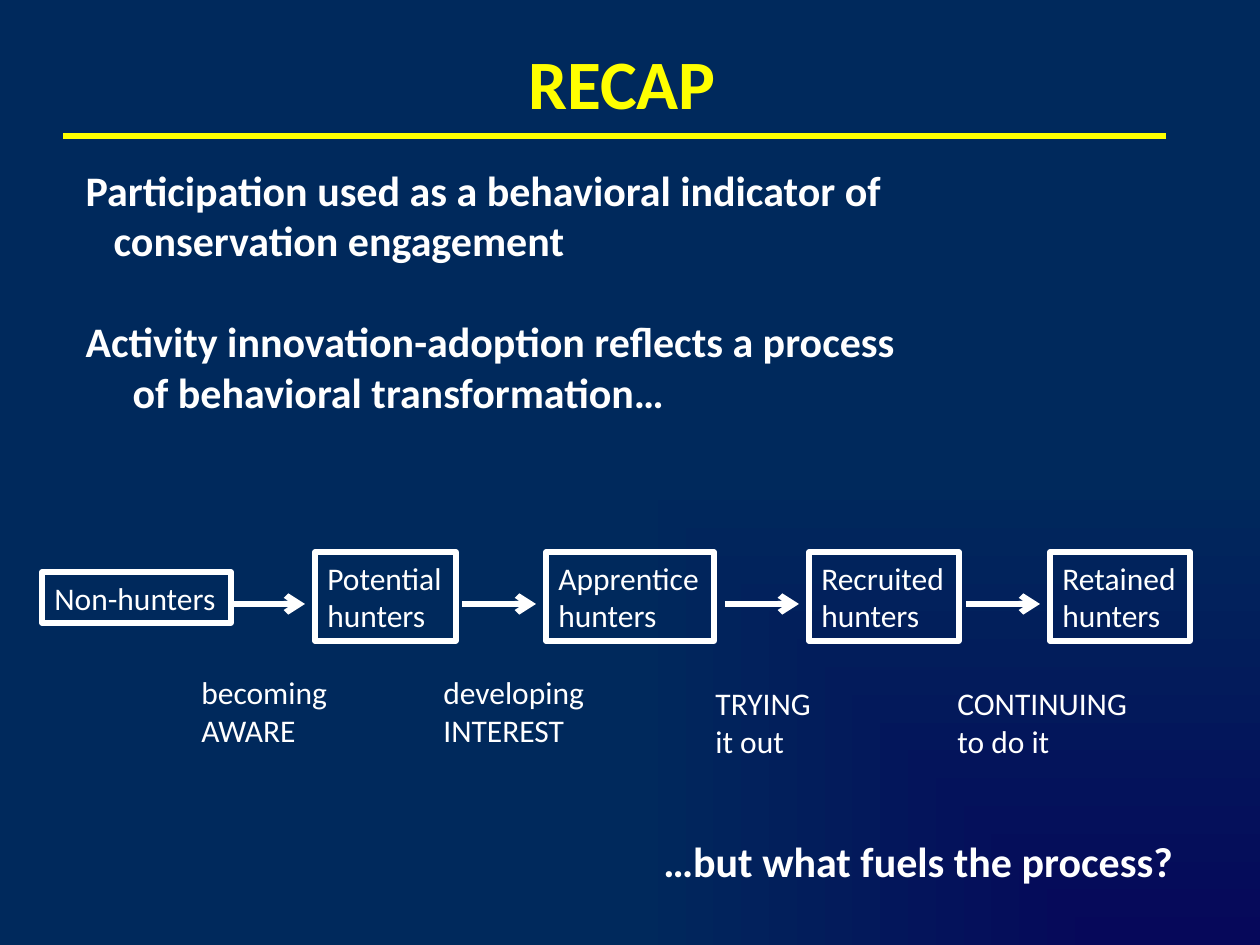
from pptx import Presentation
from pptx.dml.color import RGBColor as Rgb
from pptx.enum.shapes import MSO_CONNECTOR as Conn, MSO_SHAPE as Kind
from pptx.enum.text import MSO_ANCHOR as Anchor, MSO_AUTO_SIZE as Fit, PP_ALIGN as Align
from pptx.oxml.ns import qn
from pptx.util import Pt
from lxml.etree import SubElement as Sub

SCALE = 914400 / 126
WHITE, YELLOW = "FFFFFF", "FFFF00"
NAVY, INDIGO = "00295C", "06085A"


def emu(*sizes):
    return [round(size * SCALE) for size in sizes]


def color(code):
    return Rgb.from_string(code)


class Deck:
    font = "Calibri"

    def __init__(self, wide, high):
        self.prs = Presentation()
        self.prs.slide_width, self.prs.slide_height = emu(wide, high)
        self.slide = self.prs.slides.add_slide(self.prs.slide_layouts[1])
        self.shapes = self.slide.shapes

    def back(self, near, far):
        fill = self.slide.background.fill
        fill.gradient()
        for stop, code, place in zip(fill.gradient_stops, (near, far), (0, 1)):
            stop.color.rgb = color(code)
            stop.position = place
        grad = self.slide._element.find(".//" + qn("a:gradFill"))
        grad.remove(grad.find(qn("a:lin")))
        track = Sub(grad, qn("a:path"), path="rect")
        Sub(track, qn("a:fillToRect"), l="100000", t="100000")

    def style(self, shape, text, size, tint=WHITE, bold=False, align=Align.LEFT, wrap=False):
        frame = shape.text_frame
        frame.text = text
        frame.word_wrap = wrap
        frame.auto_size = Fit.NONE
        for para in frame.paragraphs:
            para.alignment = align
            for run in para.runs:
                font = run.font
                font.name, font.size, font.bold = self.font, Pt(size), bold
                font.color.rgb = color(tint)
        return frame

    def place(self, shape, area):
        shape.left, shape.top, shape.width, shape.height = emu(*area)

    def title(self, text, *area):
        shape = self.shapes.title
        self.place(shape, area)
        frame = self.style(shape, text, 39.6, YELLOW, True, Align.CENTER, True)
        frame.vertical_anchor = Anchor.MIDDLE

    def body(self, rows, *area):
        shape = self.slide.placeholders[1]
        self.place(shape, area)
        text = "\n".join(row[0] for row in rows)
        frame = self.style(shape, text, 24, bold=True, wrap=True)
        for para, (_, left, gap) in zip(frame.paragraphs, rows):
            para.space_before = Pt(gap)
            props = para._p.get_or_add_pPr()
            props.set("marL", str(emu(left)[0]))
            props.set("indent", "0")
            Sub(props, qn("a:buNone"))

    def box(self, text, *area):
        shape = self.shapes.add_shape(Kind.RECTANGLE, *emu(*area))
        shape.shadow.inherit = False
        shape.fill.background()
        shape.line.color.rgb = color(WHITE)
        shape.line.width = Pt(3)
        self.style(shape, text, 18)

    def label(self, text, *area, size=18, bold=False):
        self.style(self.shapes.add_textbox(*emu(*area)), text, size, bold=bold)

    def line(self, left, right, y, tint, width, arrow=False):
        line = self.shapes.add_connector(Conn.STRAIGHT, *emu(left, y, right, y))
        line.line.color.rgb = color(tint)
        line.line.width = Pt(width)
        if arrow:
            Sub(line.line._get_or_add_ln(), qn("a:tailEnd"), type="arrow")
        Sub(line._element.spPr, qn("a:effectLst"))

    def save(self):
        self.prs.save("out.pptx")


def main():
    deck = Deck(1260, 945)
    deck.back(INDIGO, NAVY)
    deck.title("RECAP ", 63, 38, 1134, 88)
    deck.line(63, 1166, 136, YELLOW, 3)
    deck.body([
        ("Participation used as a behavioral indicator of", 0, 0),
        ("conservation engagement", 28, 0),
        ("Activity innovation-adoption reflects a process", 0, 29),
        ("of behavioral transformation…", 47, 0),
    ], 73, 158, 853, 267)

    deck.box("Non-hunters", 42, 572, 189, 51)
    stages = [("Potential", 315, 141), ("Apprentice", 546, 168),
              ("Recruited", 809, 150), ("Retained", 1050, 140)]
    for name, left, wide in stages:
        deck.box(f"{name}\nhunters", left, 552, wide, 89)

    for left in (231, 462, 725, 966):
        deck.line(left, left + 74, 604, WHITE, 3.5, True)

    steps = [("becoming\nAWARE", 189, 667, 152), ("developing\nINTEREST", 431, 667, 168),
             ("TRYING\nit out", 703, 678, 122), ("CONTINUING\nto do it", 945, 678, 197)]
    for text, left, top, wide in steps:
        deck.label(text, left, top, wide, 89)

    deck.label("…but what fuels the process?", 651, 829, 541, 63, size=24, bold=True)
    deck.save()


if __name__ == "__main__":
    main()
